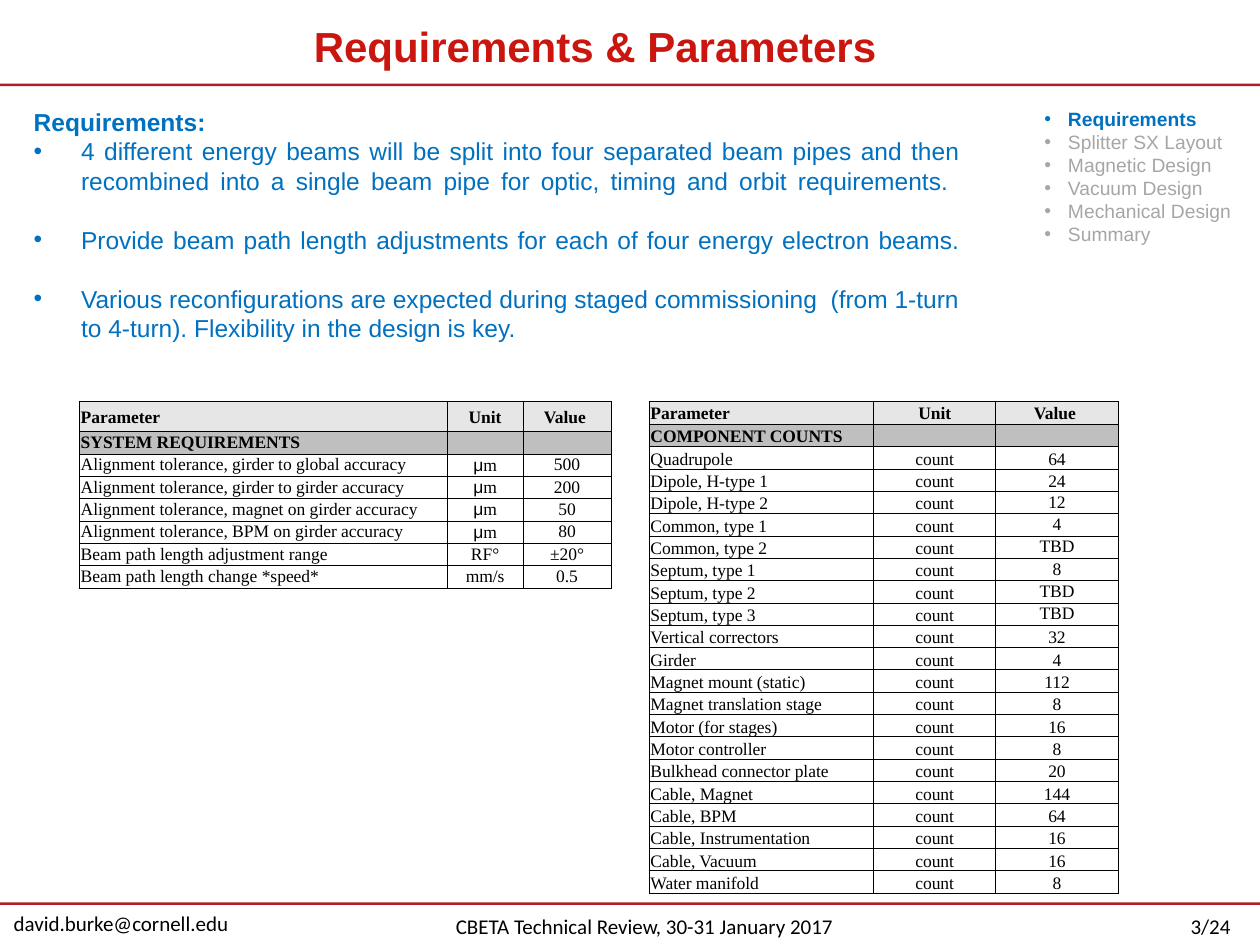
from dataclasses import dataclass

import lxml.etree
import pptx
import pptx.dml.color
import pptx.enum.shapes
import pptx.enum.text
import pptx.oxml.ns
import pptx.util

Pt = pptx.util.Pt
qn = pptx.oxml.ns.qn
ALIGN = pptx.enum.text.PP_ALIGN
ANCHOR = pptx.enum.text.MSO_ANCHOR


@dataclass(frozen=True)
class Theme:
    sans: str = "Arial"
    serif: str = "Times New Roman"
    footer_font: str = "Calibri"
    title_size: float = 24
    body_size: float = 14
    footer_size: float = 12
    outline_size: float = 11
    table_size: float = 10
    black: str = "000000"
    title: str = "CA160F"
    rule: str = "B21F22"
    accent: str = "0071C0"
    muted: str = "A6A6A6"
    header_fill: str = "E6E6E6"
    section_fill: str = "BFBFBF"


@dataclass(frozen=True)
class Box:
    left: float
    top: float
    width: float
    height: float

    def lengths(self) -> tuple:
        return Pt(self.left), Pt(self.top), Pt(self.width), Pt(self.height)


@dataclass(frozen=True)
class ParameterTable:
    box: Box
    widths: tuple
    header_height: float
    row_height: float
    section: str
    section_anchor: object
    rows: tuple
    anchor: object
    top_values: range = range(0)  # rows whose value sits at the top of its cell


THEME = Theme()
SLIDE_WIDTH, SLIDE_HEIGHT = 720, 540
LINE_BREAK = "\v"
SYMBOL = "μ"

FOOTERS = (
    ("david.burke@cornell.edu", Box(0.7, 517, 147, 21.6)),
    ("CBETA Technical Review, 30-31 January 2017", Box(253.4, 518.4, 234.7, 22)),
    ("3/24", Box(673.2, 518.4, 46.8, 21.6)),
)
REQUIREMENTS = (
    "4 different energy beams will be split into four separated beam pipes and then "
    "recombined into a single beam pipe for optic, timing and orbit requirements. " + LINE_BREAK,
    "Provide beam path length adjustments for each of four energy electron beams." + LINE_BREAK,
    "Various reconfigurations are expected during staged commissioning  (from 1-turn to 4-turn). "
    "Flexibility in the design is key.",
)
OUTLINE = ("Requirements", "Splitter SX Layout", "Magnetic Design", "Vacuum Design",
           "Mechanical Design", "Summary")
COUNTS = (
    ("Quadrupole", "64"), ("Dipole, H-type 1", "24"), ("Dipole, H-type 2", "12"),
    ("Common, type 1", "4"), ("Common, type 2", "TBD"), ("Septum, type 1", "8"),
    ("Septum, type 2", "TBD"), ("Septum, type 3", "TBD"), ("Vertical correctors", "32"),
    ("Girder", "4"), ("Magnet mount (static)", "112"), ("Magnet translation stage", "8"),
    ("Motor (for stages)", "16"), ("Motor controller", "8"), ("Bulkhead connector plate", "20"),
    ("Cable, Magnet", "144"), ("Cable, BPM", "64"), ("Cable, Instrumentation", "16"),
    ("Cable, Vacuum", "16"), ("Water manifold", "8"),
)
TOLERANCES = (
    ("girder to global", "500"), ("girder to girder", "200"),
    ("magnet on girder", "50"), ("BPM on girder", "80"),
)
TABLES = (
    ParameterTable(
        Box(371, 229.5, 268, 281), (128.2, 69.9, 69.9), 13, 12.76, "COMPONENT COUNTS", ANCHOR.BOTTOM,
        tuple((name, "count", value) for name, value in COUNTS), ANCHOR.BOTTOM, range(2, 8)),
    ParameterTable(
        Box(45.4, 229.5, 303.8, 106.6), (210.2, 43.2, 50.4), 17.3, 12.76,
        "SYSTEM REQUIREMENTS", ANCHOR.TOP,
        tuple((f"Alignment tolerance, {pair} accuracy", "μm", value) for pair, value in TOLERANCES)
        + (("Beam path length adjustment range", "RF°", "±20°"),
           ("Beam path length change *speed*", "mm/s", "0.5")), ANCHOR.TOP),
)


def rgb(color: str):
    return pptx.dml.color.RGBColor.from_string(color)


def write(frame, text: str, *, size: float, font: str = THEME.sans, color: str = THEME.black,
          bold: bool = False, align=ALIGN.LEFT, bullet_indent: float = 0) -> None:
    """Fill the empty first paragraph of the frame, or add a paragraph after its text."""
    first = frame.paragraphs[0]
    paragraph = frame.add_paragraph() if first.runs else first
    paragraph.alignment = align
    element = paragraph._p
    if bullet_indent:
        properties = element.get_or_add_pPr()
        properties.set("marL", str(Pt(bullet_indent)))
        properties.set("indent", str(-Pt(bullet_indent)))
        lxml.etree.SubElement(properties, qn("a:buFont"), typeface=THEME.sans)
        lxml.etree.SubElement(properties, qn("a:buChar"), char="•")
    for part in text.rstrip(LINE_BREAK).partition(SYMBOL):
        if part:
            run = paragraph.add_run()
            run.text = part
            run.font.name = THEME.sans if part == SYMBOL else font
            run.font.size = Pt(size)
            run.font.bold = bold
            run.font.color.rgb = rgb(color)
    points = str(int(size * 100))
    if text.endswith(LINE_BREAK):
        line_break = lxml.etree.SubElement(element, qn("a:br"))
        lxml.etree.SubElement(line_break, qn("a:rPr"), sz=points)
    ending = lxml.etree.SubElement(element, qn("a:endParaRPr"), sz=points)
    lxml.etree.SubElement(ending, qn("a:latin"), typeface=font)


def add_text_frame(slide, box: Box, wrap: bool = True):
    frame = slide.shapes.add_textbox(*box.lengths()).text_frame
    frame.word_wrap = wrap
    return frame


def add_rule(slide, top: float) -> None:
    shape = slide.shapes.add_shape(pptx.enum.shapes.MSO_SHAPE.RECTANGLE,
                                   *Box(0, top, SLIDE_WIDTH, 1.44).lengths())
    shape.shadow.inherit = False
    shape.fill.solid()
    shape.fill.fore_color.rgb = rgb(THEME.rule)
    shape.line.fill.background()


def format_cell(cell, anchor, fill: str | None) -> None:
    cell.margin_left = cell.margin_top = cell.margin_right = Pt(0.72)
    cell.margin_bottom = 0
    cell.vertical_anchor = anchor
    properties = cell._tc.get_or_add_tcPr()
    for side in ("lnL", "lnR", "lnT", "lnB"):
        line = lxml.etree.SubElement(properties, qn(f"a:{side}"), w=str(Pt(0.5)))
        solid = lxml.etree.SubElement(line, qn("a:solidFill"))
        lxml.etree.SubElement(solid, qn("a:srgbClr"), val=THEME.black)
    if fill:
        cell.fill.solid()
        cell.fill.fore_color.rgb = rgb(fill)
    else:
        cell.fill.background()


def add_parameter_table(slide, data: ParameterTable) -> None:
    rows = (("Parameter", "Unit", "Value "), (data.section, "", "")) + data.rows
    table = slide.shapes.add_table(len(rows), len(data.widths), *data.box.lengths()).table
    table.first_row = table.horz_banding = False
    for column, width in zip(table.columns, data.widths):
        column.width = Pt(width)
    fills = {0: THEME.header_fill, 1: THEME.section_fill}
    anchors = {0: ANCHOR.MIDDLE, 1: data.section_anchor}
    for row_index, row in enumerate(rows):
        table.rows[row_index].height = Pt(data.row_height if row_index else data.header_height)
        for column_index, text in enumerate(row):
            cell = table.cell(row_index, column_index)
            raised = column_index == 2 and row_index - 2 in data.top_values
            anchor = ANCHOR.TOP if raised else anchors.get(row_index, data.anchor)
            format_cell(cell, anchor, fills.get(row_index))
            write(cell.text_frame, text, size=THEME.table_size, font=THEME.serif,
                  bold=row_index < 2, align=ALIGN.CENTER if column_index else ALIGN.LEFT)


def main() -> None:
    presentation = pptx.Presentation()
    presentation.slide_width, presentation.slide_height = Pt(SLIDE_WIDTH), Pt(SLIDE_HEIGHT)
    slide = presentation.slides.add_slide(presentation.slide_layouts[6])

    for text, box in FOOTERS:
        write(add_text_frame(slide, box, wrap=False), text,
              size=THEME.footer_size, font=THEME.footer_font)
    for top in (47.8, 515.6):
        add_rule(slide, top)

    title = add_text_frame(slide, Box(179.3, 5, 375.8, 41.8))
    title.margin_left = title.margin_top = title.margin_right = title.margin_bottom = 0
    title.vertical_anchor = ANCHOR.MIDDLE
    write(title, "Requirements & Parameters", size=THEME.title_size, color=THEME.title, bold=True)

    body = add_text_frame(slide, Box(12.2, 57.6, 543.6, 143.3))
    write(body, "Requirements:", size=THEME.body_size, color=THEME.accent, bold=True)
    for text in REQUIREMENTS:
        write(body, text, size=THEME.body_size, color=THEME.accent,
              align=ALIGN.JUSTIFY, bullet_indent=27)

    outline = add_text_frame(slide, Box(589.7, 57.6, 123.1, 87.1))
    for text in OUTLINE:
        current = text == OUTLINE[0]
        write(outline, text, size=THEME.outline_size, bold=current, bullet_indent=13.5,
              color=THEME.accent if current else THEME.muted)

    for data in TABLES:
        add_parameter_table(slide, data)
    presentation.save("out.pptx")


if __name__ == "__main__":
    main()
